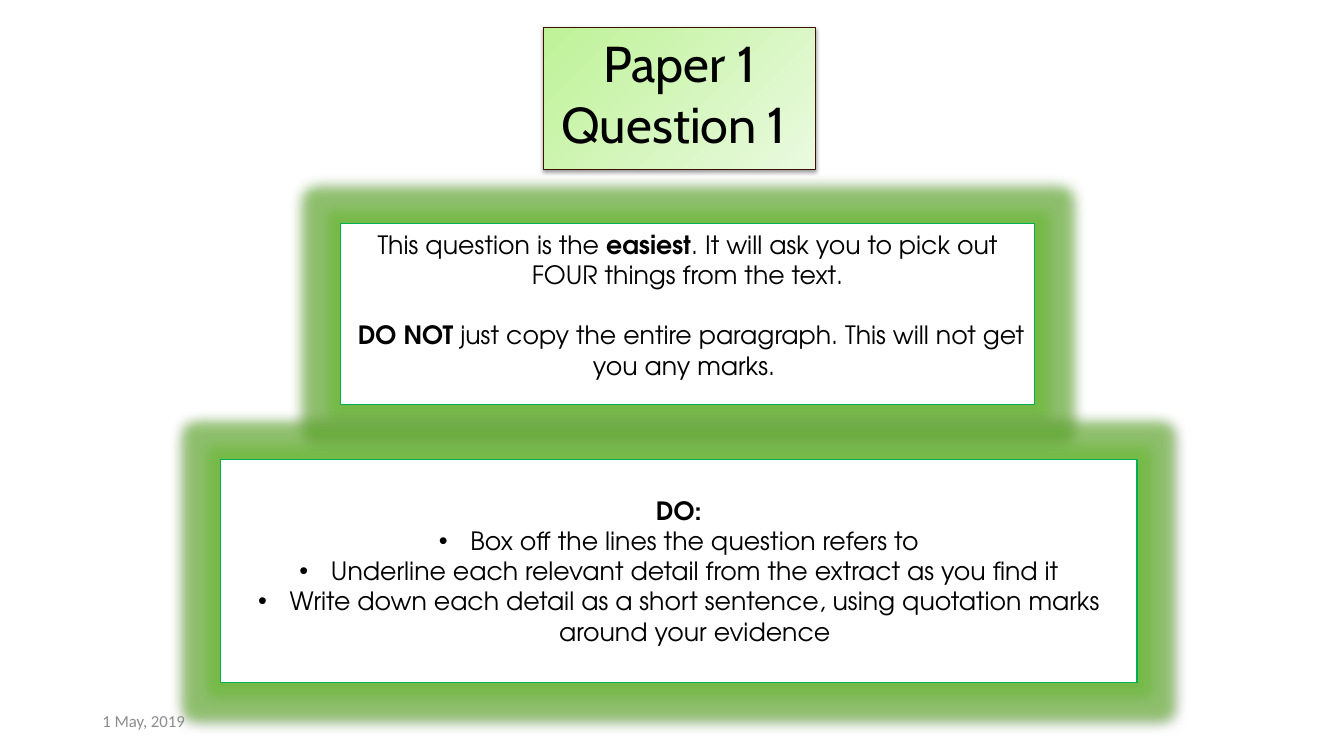
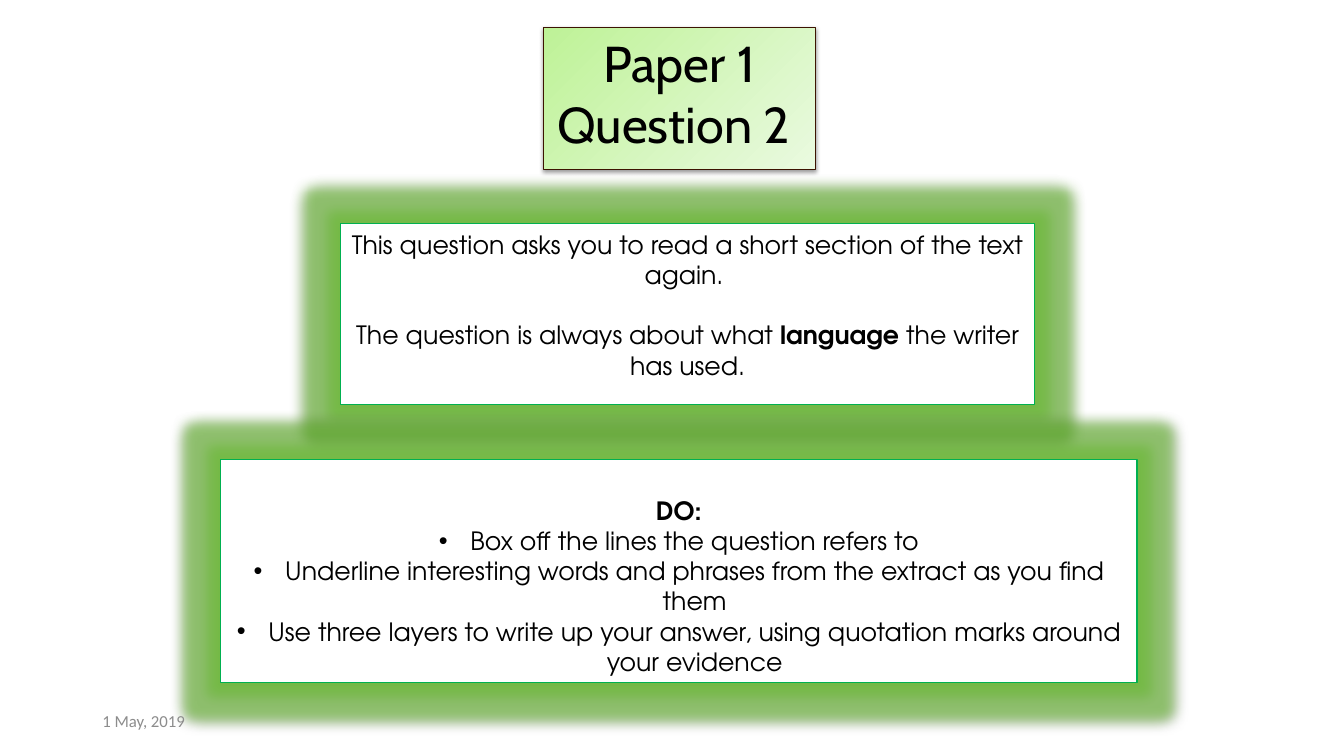
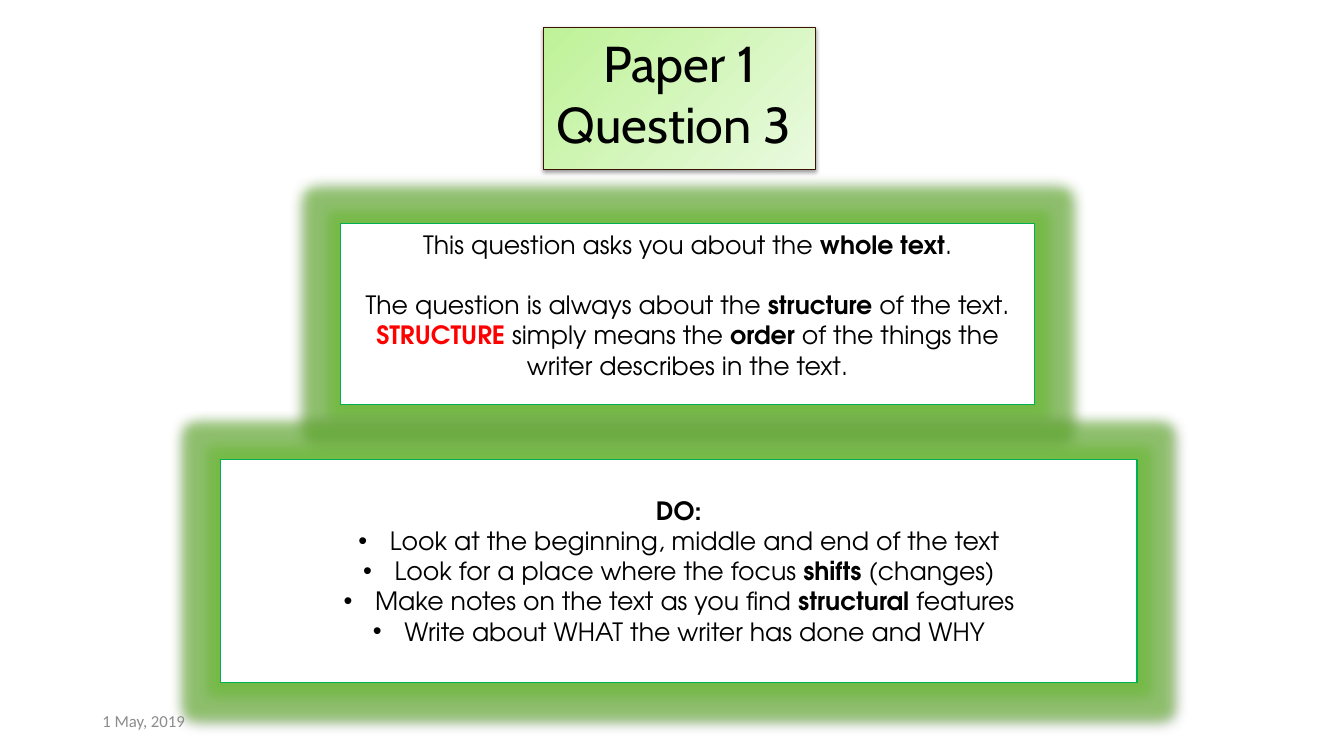
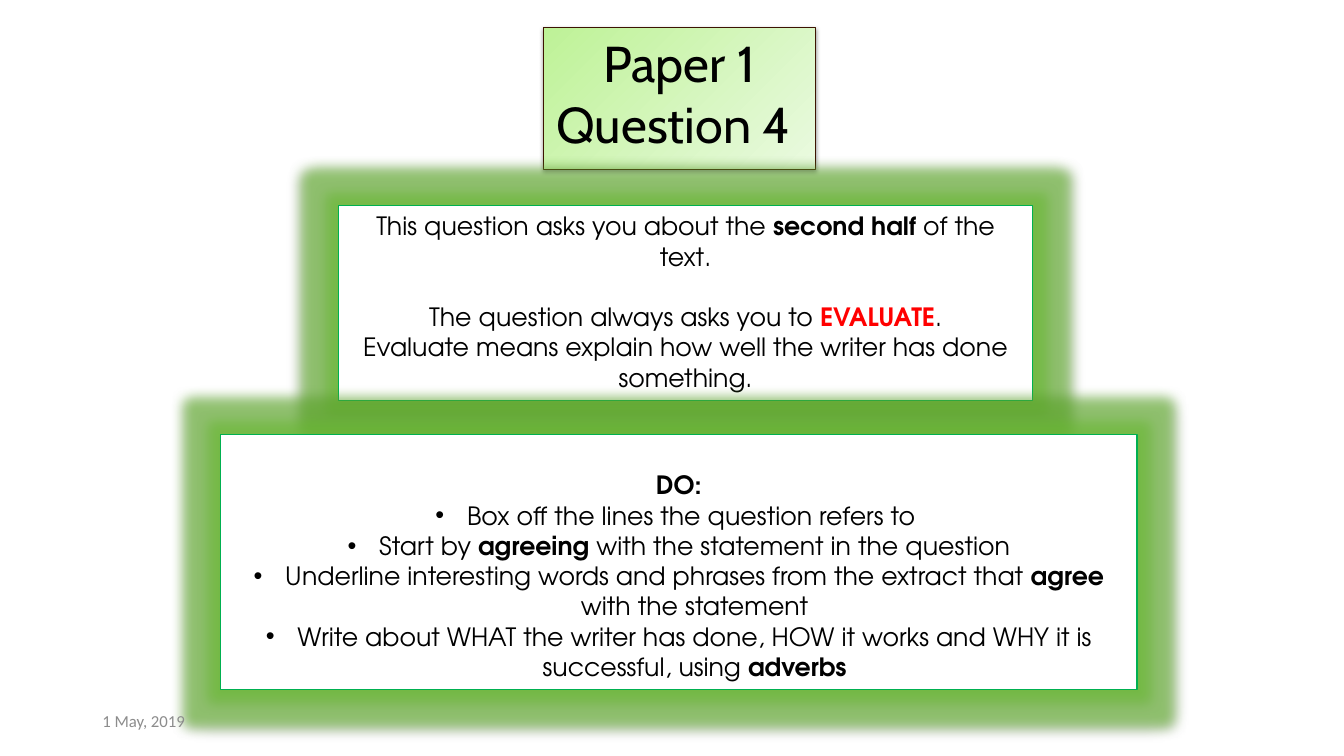
from lxml.etree import SubElement
from pptx import Presentation
from pptx.dml.color import RGBColor
from pptx.enum.shapes import MSO_SHAPE
from pptx.enum.text import MSO_ANCHOR, PP_ALIGN
from pptx.oxml import parse_xml
from pptx.oxml.ns import nsdecls, qn
from pptx.util import Pt

LINE_HEIGHT = 21.6  # one line of body text
INTRO_BOX = (243.4, 160, 495.4, 129)
ADVICE_BOX = (157.7, 328.3, 654.5, 159)

# Words between asterisks are bold; an exclamation mark after the first makes them red
QUESTIONS = [
    dict(
        intro=["This question is the *easiest*. It will ask you to pick out FOUR things from the text.",
               " *DO NOT *just copy the entire paragraph. This will not get you any marks. "],
        advice=["Box off the lines the question refers to",
                "Underline each relevant detail from the extract as you find it",
                "Write down each detail as a short sentence, using quotation marks around your evidence"]),
    dict(
        intro=["This question asks you to read a short section of the text again. ",
               "The question is always about what *language *the writer has used."],
        advice=["Box off the lines the question refers to",
                "Underline interesting words and phrases from the extract as you find them",
                "Use three layers to write up your answer, using quotation marks around your evidence"]),
    dict(
        intro=["This question asks you about the *whole text*.",
               "The question is always about the *structure* of the text. *!STRUCTURE* simply means "
               "the *order* of the things the writer describes in the text."],
        advice=["Look at the beginning, middle and end of the text",
                "Look for a place where the focus *shifts *(changes)",
                "Make notes on the text as you find *structural *features",
                "Write about WHAT the writer has done and WHY"]),
    dict(
        intro=["This question asks you about the *second half *of the text.",
               "The question always asks you to *!EVALUATE*.",
               "Evaluate means explain how well the writer has done something."],
        advice=["Box off the lines the question refers to ",
                "Start by *agreeing* with the statement in the question",
                "Underline interesting words and phrases from the extract that *agree* with the statement",
                "Write about WHAT the writer has done, HOW it works and WHY it is successful, using *adverbs*"],
        intro_box=(242, 147, 495.4, 139),
        advice_box=(157.7, 310.3, 654.5, 182)),
]


def rgb(value):
    return RGBColor.from_string(value)


class Deck:
    TITLE_FONT, BODY_FONT, DATE_FONT = "Cabin", "TeX Gyre Adventor", "Calibri"
    BLACK, RED, WHITE, GREY = "000000", "FF0000", "FFFFFF", "8C8C8C"
    GRADIENT = ("BEF297", "EAFAE0")
    TITLE_LINE, BOX_LINE, GLOW = "3C1301", "00B050", "6CBD35"

    def __init__(self):
        self.prs = Presentation()
        self.prs.slide_width, self.prs.slide_height = Pt(960), Pt(540)

    def new_slide(self):
        self.s = self.prs.slides.add_slide(self.prs.slide_layouts[6])

    def style(self, r, font, size, color, bold=False):
        r.font.name, r.font.size, r.font.bold = font, Pt(size), bold
        r.font.color.rgb = rgb(color)

    def effects(self, sp, glow):
        glow_xml = (f'<a:glow rad="{Pt(18)}"><a:srgbClr val="{self.GLOW}">'
                    '<a:alpha val="60000"/></a:srgbClr></a:glow>') if glow else ""
        sp._element.spPr.append(parse_xml(
            f'<a:effectLst {nsdecls("a")}>{glow_xml}'
            f'<a:outerShdw blurRad="{Pt(3.1)}" dist="{Pt(1.6)}" dir="5400000" rotWithShape="0">'
            f'<a:srgbClr val="{self.BLACK}"><a:alpha val="38000"/></a:srgbClr>'
            '</a:outerShdw></a:effectLst>'))

    def rectangle(self, box, line, glow):
        sp = self.s.shapes.add_shape(MSO_SHAPE.RECTANGLE, *map(Pt, box))
        sp.line.color.rgb = rgb(line)
        sp.line.width = Pt(0.75)
        self.effects(sp, glow)
        sp.text_frame.word_wrap = True
        sp.text_frame.vertical_anchor = MSO_ANCHOR.TOP
        return sp

    def title(self, text):
        sp = self.rectangle((388, 19.5, 194.5, 101.5), self.TITLE_LINE, glow=False)
        sp.fill.gradient()
        sp.fill.gradient_angle = 315
        for stop, color in zip(sp.fill.gradient_stops, self.GRADIENT):
            stop.color.rgb = rgb(color)
        sp.text_frame.text = text
        for p in sp.text_frame.paragraphs:
            p.alignment = PP_ALIGN.CENTER
            self.style(p.runs[0], self.TITLE_FONT, 36, self.BLACK)

    def glow_box(self, box, lines):
        sp = self.rectangle(box, self.BOX_LINE, glow=True)
        sp.fill.solid()
        sp.fill.fore_color.rgb = rgb(self.WHITE)
        tf = sp.text_frame
        tf.text = "\n" * (len(lines) - 1)
        for p, line in zip(tf.paragraphs, lines):
            p.alignment = PP_ALIGN.CENTER
            self.marked_text(p, line)
        return tf

    def marked_text(self, p, line):
        for i, part in enumerate(line.split("*")):
            if part:
                r = p.add_run()
                r.text = part.lstrip("!")
                color = self.RED if part.startswith("!") else self.BLACK
                self.style(r, self.BODY_FONT, 18, color, bold=i % 2 == 1)

    def intro(self, box, lines):
        tf = self.glow_box(box, lines)
        tf.paragraphs[1].space_before = Pt(LINE_HEIGHT)

    def advice(self, box, lines):
        tf = self.glow_box(box, [" *DO: *"] + lines)
        tf.margin_top = Pt(3.6 + LINE_HEIGHT)
        for p in tf.paragraphs[1:]:
            pPr = p._p.get_or_add_pPr()
            pPr.set("marL", str(Pt(22.5)))
            pPr.set("indent", str(Pt(-22.5)))
            SubElement(pPr, qn("a:buFont"), typeface="Arial")
            SubElement(pPr, qn("a:buChar"), char="•")

    def date(self, text):
        tf = self.s.shapes.add_textbox(Pt(66), Pt(500.4), Pt(216), Pt(28.8)).text_frame
        tf.word_wrap = True
        tf.vertical_anchor = MSO_ANCHOR.MIDDLE
        tf.text = text
        self.style(tf.paragraphs[0].runs[0], self.DATE_FONT, 12, self.GREY)


def main():
    deck = Deck()
    for number, question in enumerate(QUESTIONS, 1):
        deck.new_slide()
        deck.title(f"Paper 1\nQuestion {number} ")
        deck.intro(question.get("intro_box", INTRO_BOX), question["intro"])
        deck.advice(question.get("advice_box", ADVICE_BOX), question["advice"])
        deck.date("1 May, 2019")
    deck.prs.save("out.pptx")


if __name__ == "__main__":
    main()
